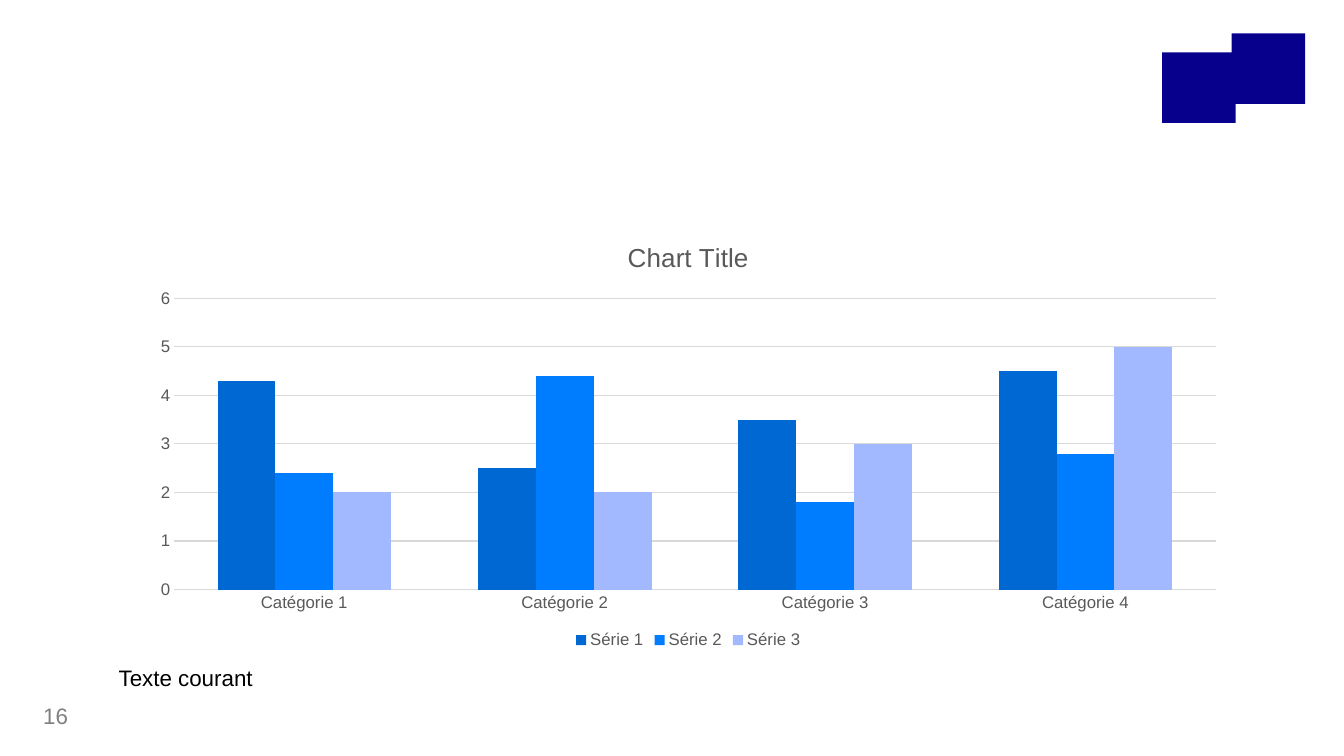
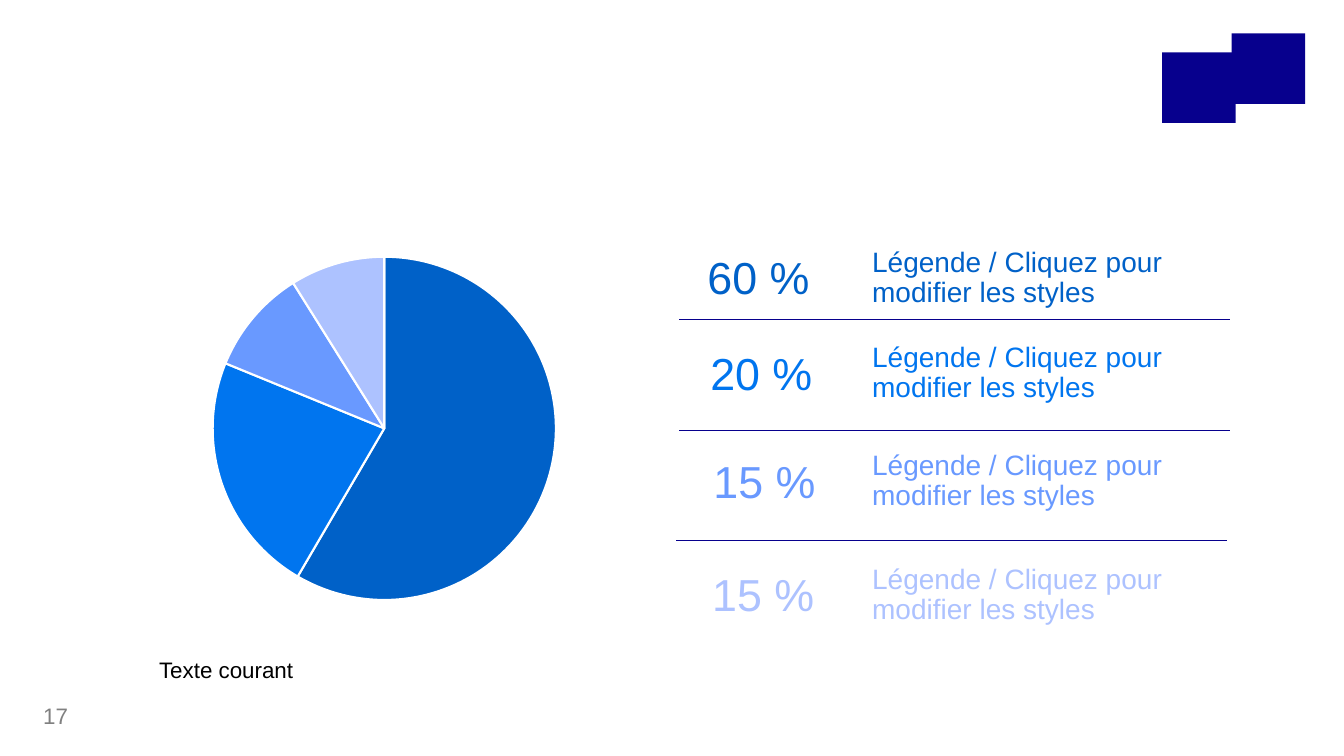
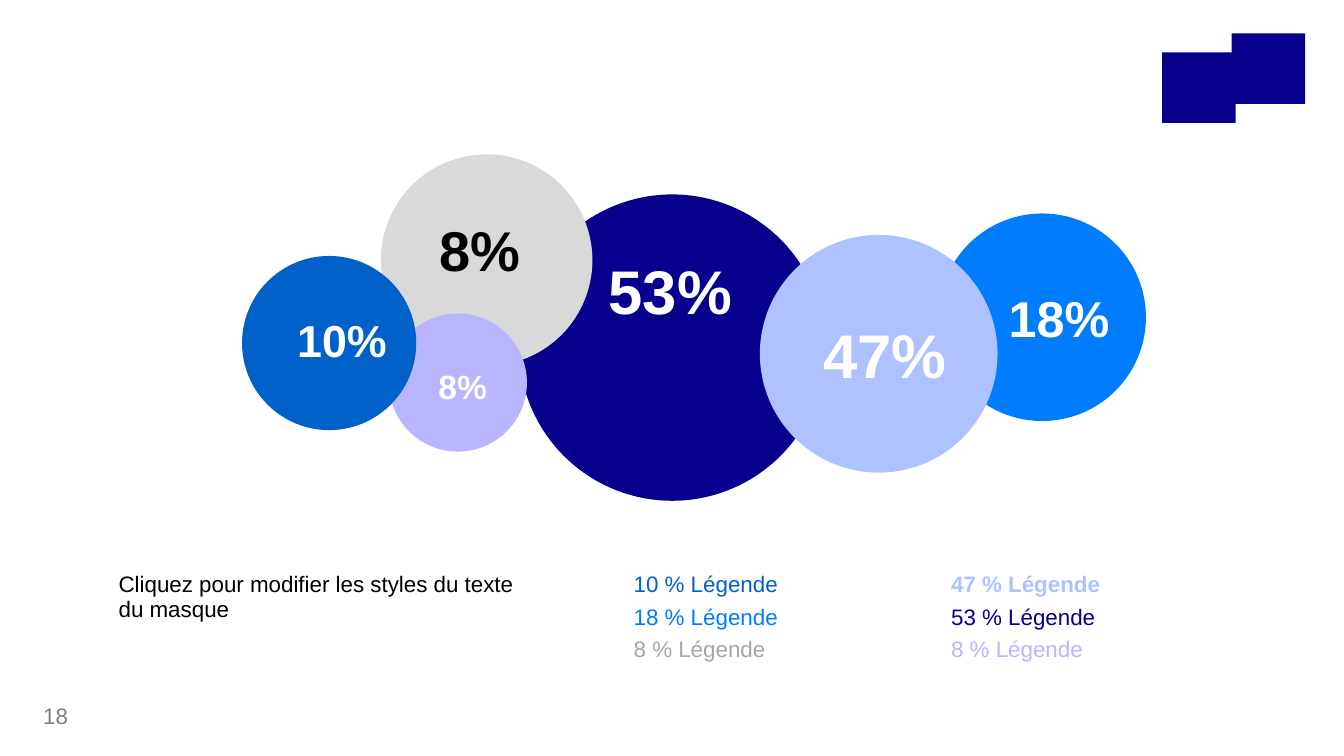
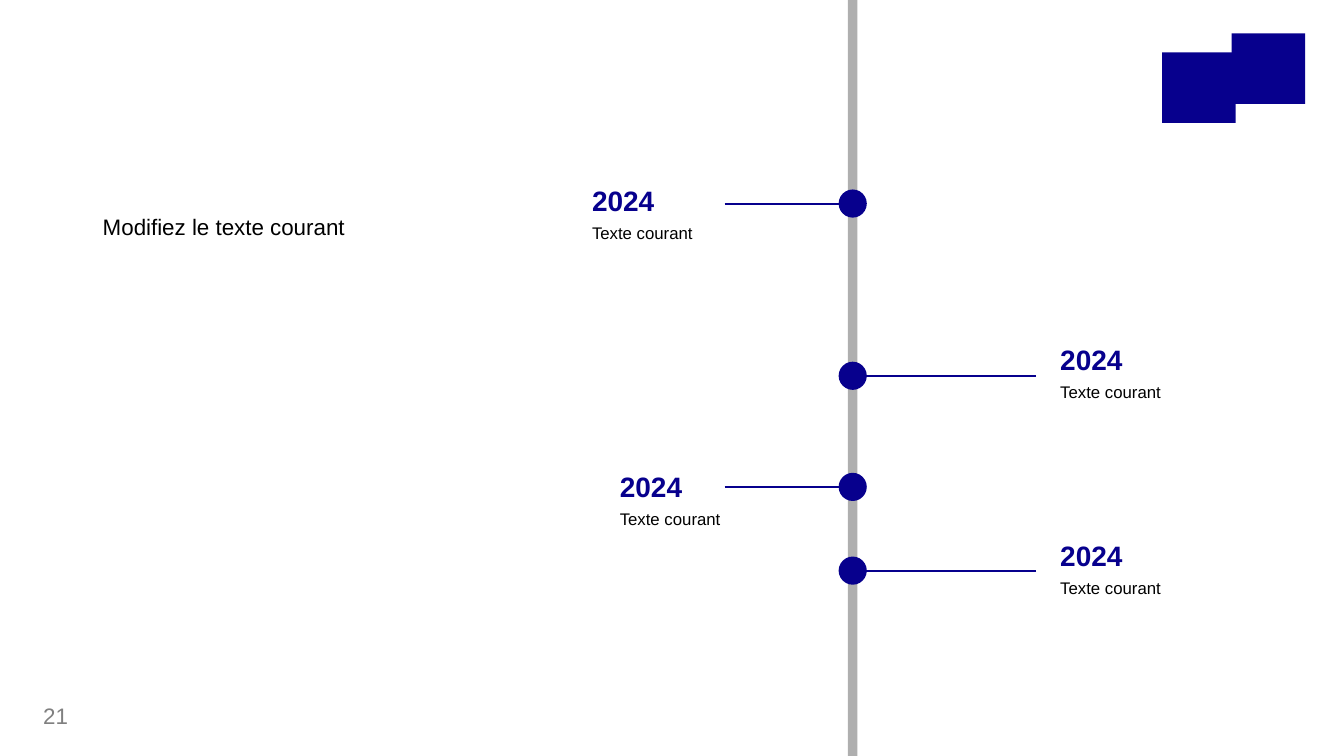
from dataclasses import dataclass

from lxml.etree import SubElement
from pptx import Presentation
from pptx.chart.data import CategoryChartData
from pptx.dml.color import RGBColor
from pptx.enum.chart import XL_CHART_TYPE, XL_LEGEND_POSITION, XL_TICK_MARK
from pptx.enum.shapes import MSO_CONNECTOR, MSO_SHAPE
from pptx.oxml.ns import qn
from pptx.util import Cm, Pt


@dataclass(frozen=True)
class Theme:
    font: str = "Arial"
    # Colours
    navy: str = "07008D"
    deep: str = "0061C8"
    strong: str = "0075EF"
    bright: str = "007DFF"
    medium: str = "6999FF"
    pale: str = "ADC2FF"
    lilac: str = "B9B5FF"
    column_first: str = "0068D3"
    column_third: str = "A2B9FF"
    black: str = "000000"
    white: str = "FFFFFF"
    dark_grey: str = "595959"
    number_grey: str = "808080"
    legend_grey: str = "A6A6A6"
    light_grey: str = "D9D9D9"
    # Type sizes
    small: float = 12
    body: float = 16
    chart_title: float = 18.6
    heading: float = 20
    figure: float = 32


theme = Theme()


def write(page, text, left, top, width, height, size=theme.body,
          colour=theme.black, bold=False):
    box = page.shapes.add_textbox(Cm(left), Cm(top), Cm(width), Cm(height))
    box.text_frame.word_wrap = True
    para = box.text_frame.paragraphs[0]
    for name, value in {"line_spacing": 0.9, "space_before": Pt(10)}.items():
        setattr(para, name, value)
    span = para.add_run()
    span.text = text
    for name, value in {"name": theme.font, "size": Pt(size), "bold": bold}.items():
        setattr(span.font, name, value)
    span.font.color.rgb = RGBColor.from_string(colour)


def draw(page, kind, left, top, width, height, colour):
    shape = page.shapes.add_shape(kind, Cm(left), Cm(top), Cm(width), Cm(height))
    shape.shadow.inherit = False
    shape.fill.solid()
    shape.fill.fore_color.rgb = RGBColor.from_string(colour)
    shape.line.fill.background()


deck = Presentation()
deck.slide_width, deck.slide_height = Cm(33.87), Cm(19.05)

# Shared frame: page number and the two corner blocks
pages = []
for number in (16, 17, 18, 21):
    page = deck.slides.add_slide(deck.slide_layouts[6])
    write(page, str(number), 0.84, 17.65, 1.7, 0.94, colour=theme.number_grey)
    for left, top in ((31.04, 0.84), (29.29, 1.32)):
        draw(page, MSO_SHAPE.RECTANGLE, left, top, 1.85, 1.78, theme.navy)
    pages.append(page)
column_page, pie_page, bubble_page, timeline_page = pages

# Lines of the pie legend and of the timeline
axis_x, branch_end = 21.49, 21.56
events = [  # branch start, branch height, text left, text top
    (18.26, 5.13, 14.67, 4.6),
    (26.11, 9.47, 26.47, 8.61),
    (18.26, 12.27, 15.37, 11.81),
    (26.11, 14.38, 26.47, 13.54),
]
lines = [(pie_page, left, y, left + 13.87, y, theme.navy, 0.75)
         for left, y in ((17.12, 8.05), (17.12, 10.85), (17.04, 13.61))]
lines += [(timeline_page, start, y, branch_end, y, theme.navy, 1.5)
          for start, y, _, _ in events]
lines.append((timeline_page, axis_x, 0, axis_x, 19.05, theme.dark_grey, 6.75))
for page, x1, y1, x2, y2, colour, weight in lines:
    line = page.shapes.add_connector(
        MSO_CONNECTOR.STRAIGHT, Cm(x1), Cm(y1), Cm(x2), Cm(y2))
    line.line.width = Pt(weight)
    line.line.color.rgb = RGBColor.from_string(colour)
    properties = line._element.spPr
    SubElement(properties, qn("a:effectLst"))
    if x1 == x2:  # the timeline axis is see-through
        SubElement(next(properties.iter(qn("a:srgbClr"))), qn("a:alpha"), val="47000")

# Column chart
write(column_page, "Texte courant", 2.74, 16.69, 10.92, 0.99)
data = CategoryChartData()
data.categories = [f"Catégorie {index}" for index in range(1, 5)]
data.add_series("Série 1", (4.3, 2.5, 3.5, 4.5))
data.add_series("Série 2", (2.4, 4.4, 1.8, 2.8))
data.add_series("Série 3", (2, 2, 3, 5))
chart = column_page.shapes.add_chart(
    XL_CHART_TYPE.COLUMN_CLUSTERED, Cm(3.5), Cm(5.59), Cm(27.69), Cm(10.87), data).chart
chart.has_title = chart.has_legend = True
chart.legend.position = XL_LEGEND_POSITION.BOTTOM
chart.legend.include_in_layout = False
chart.chart_title.text_frame.text = "Chart Title"
title_font = chart.chart_title.text_frame.paragraphs[0].runs[0].font
for font, size in ((chart.font, theme.small), (title_font, theme.chart_title)):
    for name, value in {"name": theme.font, "size": Pt(size), "bold": False}.items():
        setattr(font, name, value)
    font.color.rgb = RGBColor.from_string(theme.dark_grey)
for axis in (chart.category_axis, chart.value_axis):
    axis.major_tick_mark = axis.minor_tick_mark = XL_TICK_MARK.NONE
for name, value in {"minimum_scale": 0, "maximum_scale": 6, "major_unit": 1}.items():
    setattr(chart.value_axis, name, value)
chart.value_axis.format.line.fill.background()
for part in (chart.category_axis, chart.value_axis.major_gridlines):
    part.format.line.width = Pt(0.75)
    part.format.line.color.rgb = RGBColor.from_string(theme.light_grey)
plot = chart.plots[0]
for name, value in {"gap_width": 150, "overlap": 0, "vary_by_categories": False}.items():
    setattr(plot, name, value)
for series, colour in zip(plot.series,
                          (theme.column_first, theme.bright, theme.column_third)):
    series.format.fill.solid()
    series.format.fill.fore_color.rgb = RGBColor.from_string(colour)

# Pie chart with its legend
data = CategoryChartData()
data.categories = ["1", "2", "3", "4"]
data.add_series("Series 1", (59, 23, 10, 9))
chart = pie_page.shapes.add_chart(
    XL_CHART_TYPE.PIE, Cm(3.45), Cm(6.12), Cm(12.47), Cm(9.35), data).chart
chart.has_title = chart.has_legend = False
chart.font.name, chart.font.size = theme.font, Pt(10)
slices = [
    ("60 %", 17.58, 6.12, theme.deep),
    ("20 %", 17.65, 8.53, theme.strong),
    ("15 %", 17.73, 11.25, theme.medium),
    ("15 %", 17.7, 14.12, theme.pale),
]
for index, (share, left, top, colour) in enumerate(slices):
    point = chart.plots[0].series[0].points[index].format
    point.fill.solid()
    point.fill.fore_color.rgb = RGBColor.from_string(colour)
    point.line.width = Pt(1.5)
    point.line.color.rgb = RGBColor.from_string(theme.white)
    write(pie_page, share, left, top + 0.2, 3.7, 1.5, theme.figure, colour)
    write(pie_page, "Légende / Cliquez pour modifier les styles",
          21.73, top, 8.76, 1.93, theme.heading, colour)
write(pie_page, "Texte courant", 3.76, 16.48, 10.92, 0.99)

# Bubbles: left, top, diameter, fill, then label, left, top, size, colour
bubbles = [
    (13.08, 4.9, 7.72, theme.navy, "53%", 15.09, 6.45, 44, theme.white),
    (23.65, 5.38, 5.23, theme.bright, "18%", 25.17, 7.29, 36, theme.white),
    (19.15, 5.92, 5.99, theme.pale, "47%", 20.5, 8.08, 44, theme.white),
    (9.6, 3.89, 5.33, theme.light_grey, "8%", 10.82, 5.51, 40, theme.black),
    (9.8, 7.9, 3.48, theme.lilac, "8%", 10.8, 9.22, 24, theme.white),
    (6.1, 6.45, 4.39, theme.deep, "10%", 7.24, 7.92, 32, theme.white),
]
for left, top, size, fill, label, label_left, label_top, label_size, colour in bubbles:
    draw(bubble_page, MSO_SHAPE.OVAL, left, top, size, size, fill)
    write(bubble_page, label, label_left, label_top, 4.52, 2, label_size, colour, True)

# Bubble legend in two columns
write(bubble_page, "Cliquez pour modifier les styles du texte du masque",
      2.74, 14.33, 10.54, 2.11)
legend_columns = {
    15.72: [("10 %", theme.deep), ("18 %", theme.bright), ("8 %", theme.legend_grey)],
    23.72: [("47 %", theme.pale), ("53 %", theme.navy), ("8 %", theme.lilac)],
}
for left, entries in legend_columns.items():
    for row, (share, colour) in enumerate(entries):
        write(bubble_page, f"{share} Légende", left, 14.33 + 0.81 * row, 10, 0.91,
              colour=colour, bold=share == "47 %")

# Timeline dots and texts
dot = 0.71
write(timeline_page, "Modifiez le texte courant", 2.34, 5.33, 11.79, 11.13)
for _, y, left, top in events:
    draw(timeline_page, MSO_SHAPE.OVAL, axis_x - dot / 2, y - dot / 2, dot, dot, theme.navy)
    write(timeline_page, "2024", left, top, 2.21, 0.94, theme.heading, theme.navy, True)
    write(timeline_page, "Texte courant", left, top + 0.94, 3.2, 0.79, theme.small)

deck.save("out.pptx")
